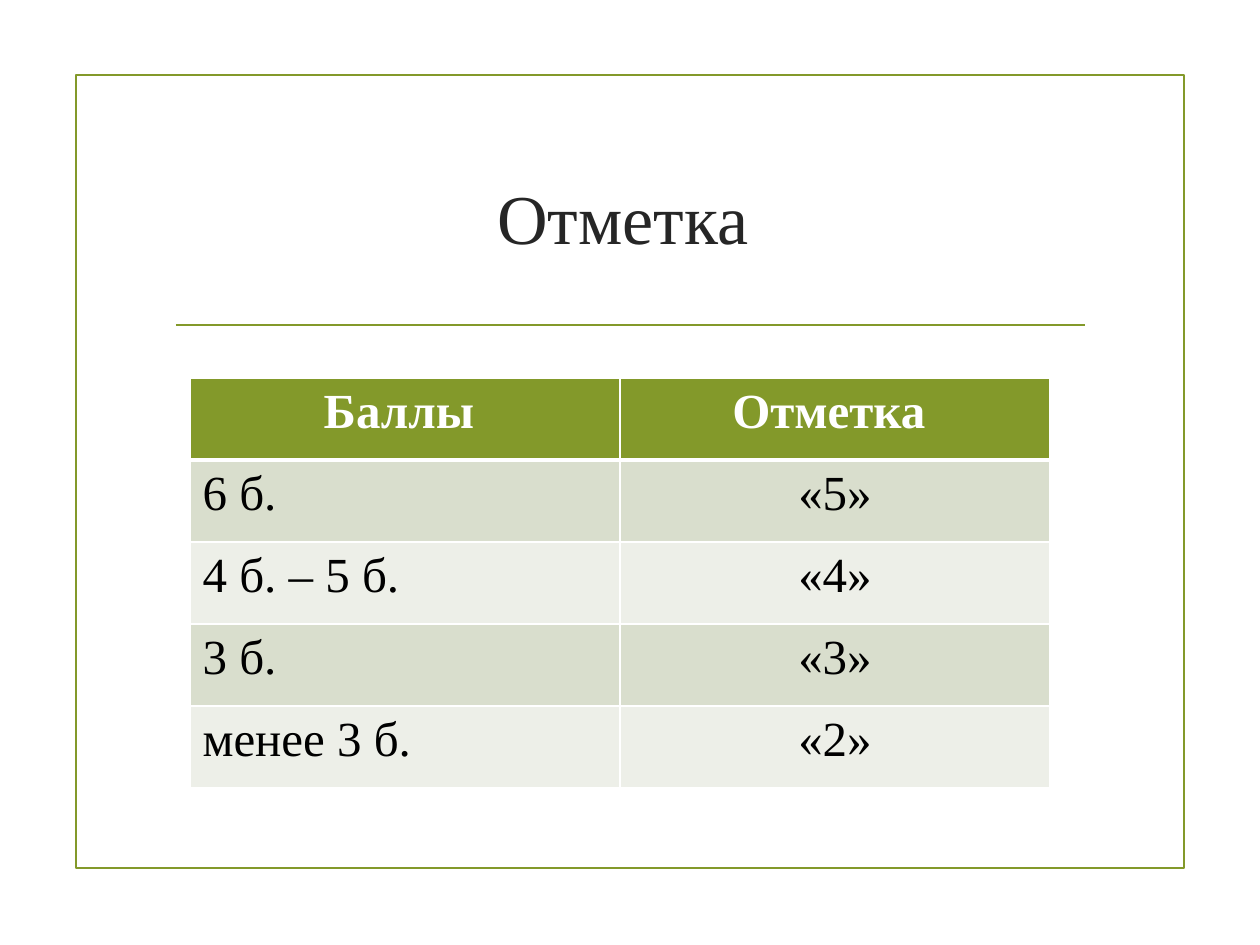
from lxml.etree import SubElement
from pptx import Presentation
from pptx.dml.color import RGBColor
from pptx.enum.shapes import MSO_CONNECTOR, MSO_SHAPE
from pptx.enum.text import MSO_ANCHOR, PP_ALIGN
from pptx.oxml.ns import qn
from pptx.util import Pt

COLORS = {"green": "83992A", "title": "262626", "white": "FFFFFF",
          "black": "000000", "band1": "D9DECD", "band2": "EDEFE8"}
FONT = "Times New Roman"
ROWS = [("Баллы ", "Отметка "), ("6 б.", "«5»"), ("4 б. – 5 б.", "«4»"),
        ("3 б.", "«3»"), ("менее 3 б.", "«2»")]
COL_W, ROW_H = 430, 82


def px(n):
    return round(n * 914400 / 126)


def add_run(p, text, size, color, bold=False):
    r = p.add_run()
    r.text = text
    r.font.name = FONT
    r.font.size = Pt(size)
    r.font.bold = bold
    r.font.color.rgb = RGBColor.from_string(COLORS[color])


prs = Presentation()
prs.slide_width, prs.slide_height = px(1260), px(945)
s = prs.slides.add_slide(prs.slide_layouts[6])

# Frame and rule under the title
frame = s.shapes.add_shape(MSO_SHAPE.RECTANGLE, px(76), px(75), px(1108), px(793))
frame.shadow.inherit = False
frame.fill.background()
rule = s.shapes.add_connector(MSO_CONNECTOR.STRAIGHT, px(176), px(325), px(1085), px(325))
SubElement(rule._element.spPr, qn("a:effectLst"))
for sp in (frame, rule):
    sp.line.color.rgb = RGBColor.from_string(COLORS["green"])
    sp.line.width = Pt(1.25)

# Title
title = s.shapes.add_textbox(px(163), px(126), px(937), px(180))
tf = title.text_frame
tf.word_wrap = True
tf.vertical_anchor = MSO_ANCHOR.MIDDLE
p = tf.paragraphs[0]
p.alignment = PP_ALIGN.CENTER
add_run(p, "Отметка ", 40, "title")

# Table of points and marks
table = s.shapes.add_table(len(ROWS), 2, px(190), px(378),
                           px(2 * COL_W), px(len(ROWS) * ROW_H)).table
for col in table.columns:
    col.width = px(COL_W)
for i, texts in enumerate(ROWS):
    table.rows[i].height = px(ROW_H)
    header = i == 0
    fill = "green" if header else ("band1" if i % 2 else "band2")
    for j, text in enumerate(texts):
        cell = table.cell(i, j)
        tcPr = cell._tc.get_or_add_tcPr()
        for side in "LRTB":
            thick = (side == "B" and i == 0) or (side == "T" and i == 1)
            ln = SubElement(tcPr, qn(f"a:ln{side}"), w=str(Pt(3 if thick else 1)))
            SubElement(SubElement(ln, qn("a:solidFill")), qn("a:srgbClr"), val=COLORS["white"])
        cell.fill.solid()
        cell.fill.fore_color.rgb = RGBColor.from_string(COLORS[fill])
        p = cell.text_frame.paragraphs[0]
        p.alignment = PP_ALIGN.CENTER if header or j == 1 else PP_ALIGN.LEFT
        add_run(p, text, 28, "white" if header else "black", header)

prs.save("out.pptx")
